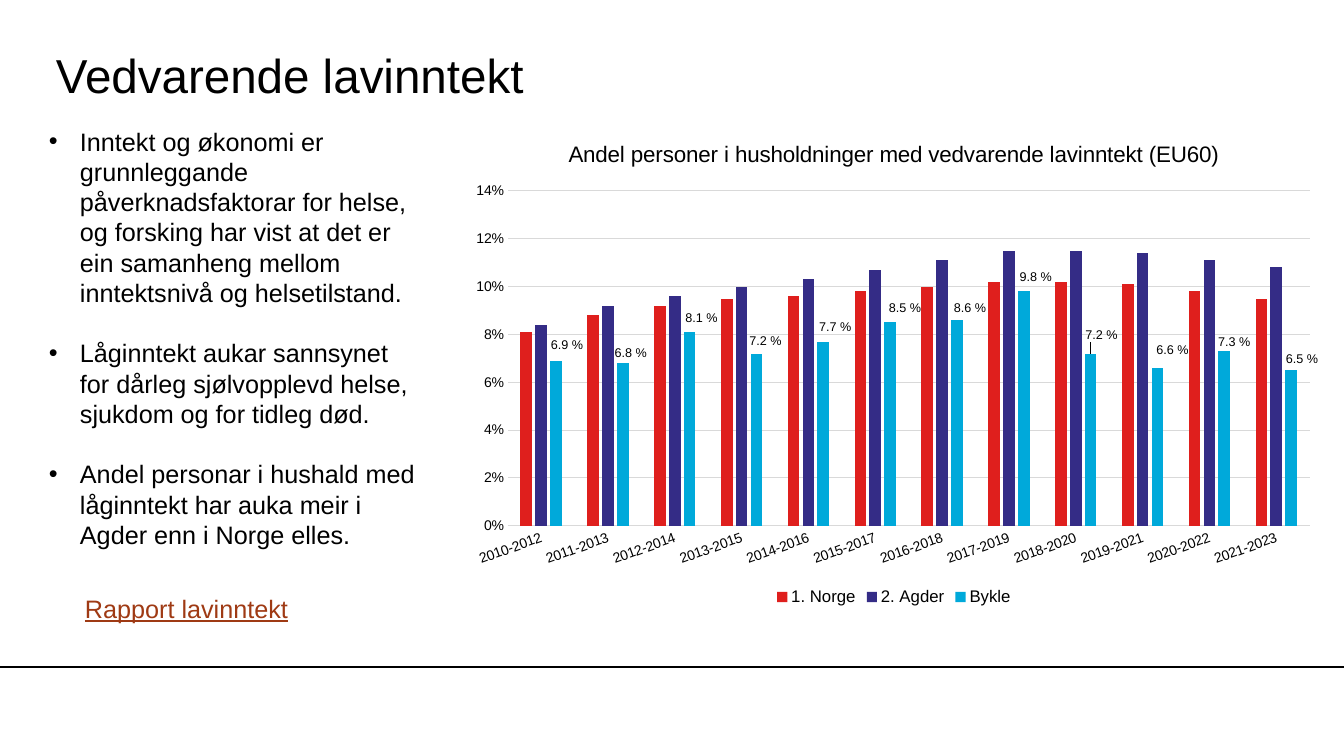
from lxml import etree
from pptx import Presentation
from pptx.chart.data import CategoryChartData
from pptx.dml.color import RGBColor
from pptx.enum.chart import XL_CHART_TYPE, XL_LABEL_POSITION, XL_LEGEND_POSITION, XL_TICK_MARK
from pptx.enum.shapes import MSO_CONNECTOR
from pptx.enum.text import MSO_ANCHOR
from pptx.oxml import parse_xml
from pptx.oxml.ns import nsdecls, qn
from pptx.util import Pt

COLUMNS = XL_CHART_TYPE.COLUMN_CLUSTERED
OUTSIDE = XL_LABEL_POSITION.OUTSIDE_END
BOTTOM = XL_LEGEND_POSITION.BOTTOM
NO_TICK = XL_TICK_MARK.NONE
STRAIGHT = MSO_CONNECTOR.STRAIGHT
TOP, MIDDLE = MSO_ANCHOR.TOP, MSO_ANCHOR.MIDDLE

EMU_PER_PX = 914400 / 100.8
WIDTH, HEIGHT = 1344, 756
FONT = "Arial"
BLACK, GREY, RUST = "000000", "D9D9D9", "9F3A14"
LABEL_FORMAT = r"0.0\ %"

BULLETS = [
    "Inntekt og økonomi er grunnleggande påverknadsfaktorar for helse, og forsking har vist "
    "at det er ein samanheng mellom inntektsnivå og helsetilstand.",
    "Låginntekt aukar sannsynet for dårleg sjølvopplevd helse, sjukdom og for tidleg død.",
    "Andel personar i hushald med låginntekt har auka meir i Agder enn i Norge elles.",
]
PERIODS = [f"{year}-{year + 2}" for year in range(2010, 2022)]
SERIES = [  # name, colour, percentages
    ("1. Norge", "DF1F1D", [8.1, 8.8, 9.2, 9.5, 9.6, 9.8, 10, 10.2, 10.2, 10.1, 9.8, 9.5]),
    ("2. Agder", "342C86", [8.4, 9.2, 9.6, 10, 10.3, 10.7, 11.1, 11.5, 11.5, 11.4, 11.1, 10.8]),
    ("Bykle", "00A9DA", [6.9, 6.8, 8.1, 7.2, 7.7, 8.5, 8.6, 9.8, 7.2, 6.6, 7.3, 6.5]),
]
# Shift of each Bykle label from its standard place, in px
LABEL_SHIFTS = [(11, -4), (8, 1), (12, -2), (9, -1), (12, -3), (15, -3),
                (13, -1), (12, -3), (11, -7), (15, -6), (10, 2), (11, 0)]


def px(length):
    return round(length * EMU_PER_PX)


def color(code):
    return RGBColor.from_string(code)


def layout(x, y, width=None, height=None):
    """Manual chart layout in fractions; with a size, it places the inner plot."""
    values = [("x", x), ("y", y)]
    if width is not None:
        values = [("layoutTarget", "inner"), ("xMode", "edge"), ("yMode", "edge"),
                  *values, ("w", width), ("h", height)]
    parts = "".join(f'<c:{tag} val="{value}"/>' for tag, value in values)
    return parse_xml(f'<c:layout {nsdecls("c")}><c:manualLayout>{parts}</c:manualLayout></c:layout>')


class SlideBuilder:
    def __init__(self, presentation):
        self.slide = presentation.slides.add_slide(presentation.slide_layouts[6])

    def style(self, font, size, code=BLACK):
        font.name, font.size, font.bold = FONT, Pt(size), False
        font.color.rgb = color(code)

    def text(self, box, paragraphs, size, code=BLACK, margins=(10, 5), anchor=TOP,
             bullets=False, underline=False):
        shape = self.slide.shapes.add_textbox(*map(px, box))
        frame = shape.text_frame
        frame.word_wrap = True
        frame.vertical_anchor = anchor
        frame.margin_left = frame.margin_right = px(margins[0])
        frame.margin_top = frame.margin_bottom = px(margins[1])
        frame.text = "\n".join(paragraphs)
        for index, paragraph in enumerate(frame.paragraphs):
            paragraph.line_spacing = Pt(size * 1.2)
            if index:
                paragraph.space_before = Pt(size * 1.2)
            if bullets:
                properties = paragraph._p.get_or_add_pPr()
                properties.set("marL", str(px(31)))
                properties.set("indent", str(-px(31)))
                etree.SubElement(properties, qn("a:buFont")).set("typeface", FONT)
                etree.SubElement(properties, qn("a:buChar")).set("char", "•")
            for run in paragraph.runs:
                self.style(run.font, size, code)
                if underline:
                    run.font.underline = True

    def line(self, x1, y1, x2, y2):
        connector = self.slide.shapes.add_connector(STRAIGHT, *map(px, (x1, y1, x2, y2)))
        connector.line.color.rgb = color(BLACK)
        connector.line.width = Pt(0.75)
        etree.SubElement(connector._element.spPr, qn("a:effectLst"))

    def column_chart(self, box, title, categories, series_rows):
        data = CategoryChartData(number_format="0.0%")
        data.categories = categories
        for name, _, values in series_rows:
            data.add_series(name, [round(value / 100, 3) for value in values])
        chart = self.slide.shapes.add_chart(COLUMNS, *map(px, box), data).chart
        self.style(chart.font, 10)

        # Title and legend
        chart.has_title = True
        chart.chart_title.include_in_layout = False
        chart.chart_title.text_frame.text = title
        self.style(chart.chart_title.text_frame.paragraphs[0].runs[0].font, 16)
        title_layout = layout(0.12, 0.04)
        manual = title_layout[0]
        for position, tag in enumerate(("c:xMode", "c:yMode")):
            mode = etree.Element(qn(tag))
            mode.set("val", "edge")
            manual.insert(position, mode)
        chart.chart_title._element.find(qn("c:tx")).addnext(title_layout)
        chart.has_legend = True
        chart.legend.position = BOTTOM
        chart.legend.include_in_layout = False
        self.style(chart.legend.font, 12)

        # Axes
        value_axis, category_axis = chart.value_axis, chart.category_axis
        for axis in (value_axis, category_axis):
            axis.major_tick_mark = axis.minor_tick_mark = NO_TICK
            self.style(axis.tick_labels.font, 10)
        value_axis.minimum_scale, value_axis.maximum_scale = 0, 0.14
        value_axis.major_unit = 0.02
        value_axis.tick_labels.number_format = "0%"
        value_axis.tick_labels.number_format_is_linked = False
        value_axis.format.line.fill.background()
        for line in (value_axis.major_gridlines.format.line, category_axis.format.line):
            line.color.rgb = color(GREY)
            line.width = Pt(0.75)
        category_axis._element.find(f"{qn('c:txPr')}/{qn('a:bodyPr')}").set("rot", "-1200000")

        # Columns
        plot = chart.plots[0]
        plot.gap_width, plot.overlap, plot.vary_by_categories = 219, -27, False
        for series, (_, code, _) in zip(plot.series, series_rows):
            series.format.fill.solid()
            series.format.fill.fore_color.rgb = color(code)
        plot_area = chart._chartSpace.chart.plotArea
        for old in plot_area.findall(qn("c:layout")):
            plot_area.remove(old)
        plot_area.insert(0, layout(0.055, 0.143, 0.924, 0.685))
        return chart

    def value_labels(self, series, shifts, box):
        labels = series.data_labels
        labels.show_value = True
        labels.number_format, labels.number_format_is_linked = LABEL_FORMAT, False
        labels.position = OUTSIDE
        self.style(labels.font, 9)
        for index in range(len(shifts)):
            label = series.points[index].data_label
            self.style(label.font, 9)
            label.position = OUTSIDE
        for element, (dx, dy) in zip(labels._element.findall(qn("c:dLbl")), shifts):
            number_format = etree.Element(qn("c:numFmt"))
            number_format.set("formatCode", LABEL_FORMAT)
            number_format.set("sourceLinked", "0")
            element.insert(1, layout(round(dx / box[2], 4), round(dy / box[3], 4)))
            element.insert(2, number_format)


def main():
    presentation = Presentation()
    presentation.slide_width, presentation.slide_height = px(WIDTH), px(HEIGHT)
    builder = SlideBuilder(presentation)

    # Footer rule and title
    builder.line(0, 667, WIDTH, 667)
    builder.text((56, 36, 1119, 76), ["Vedvarende lavinntekt"], 34, margins=(0, 0), anchor=MIDDLE)

    # Left column
    builder.text((39, 121, 389, 437), BULLETS, 18, bullets=True)
    builder.text((75, 588, 267, 40), ["Rapport lavinntekt"], 18, RUST, underline=True)

    # Chart
    chart_box = (460, 121, 868, 489)
    chart = builder.column_chart(
        chart_box, "Andel personer i husholdninger med vedvarende lavinntekt (EU60)", PERIODS, SERIES)
    builder.value_labels(chart.plots[0].series[2], LABEL_SHIFTS, chart_box)

    presentation.save("out.pptx")


if __name__ == "__main__":
    main()
